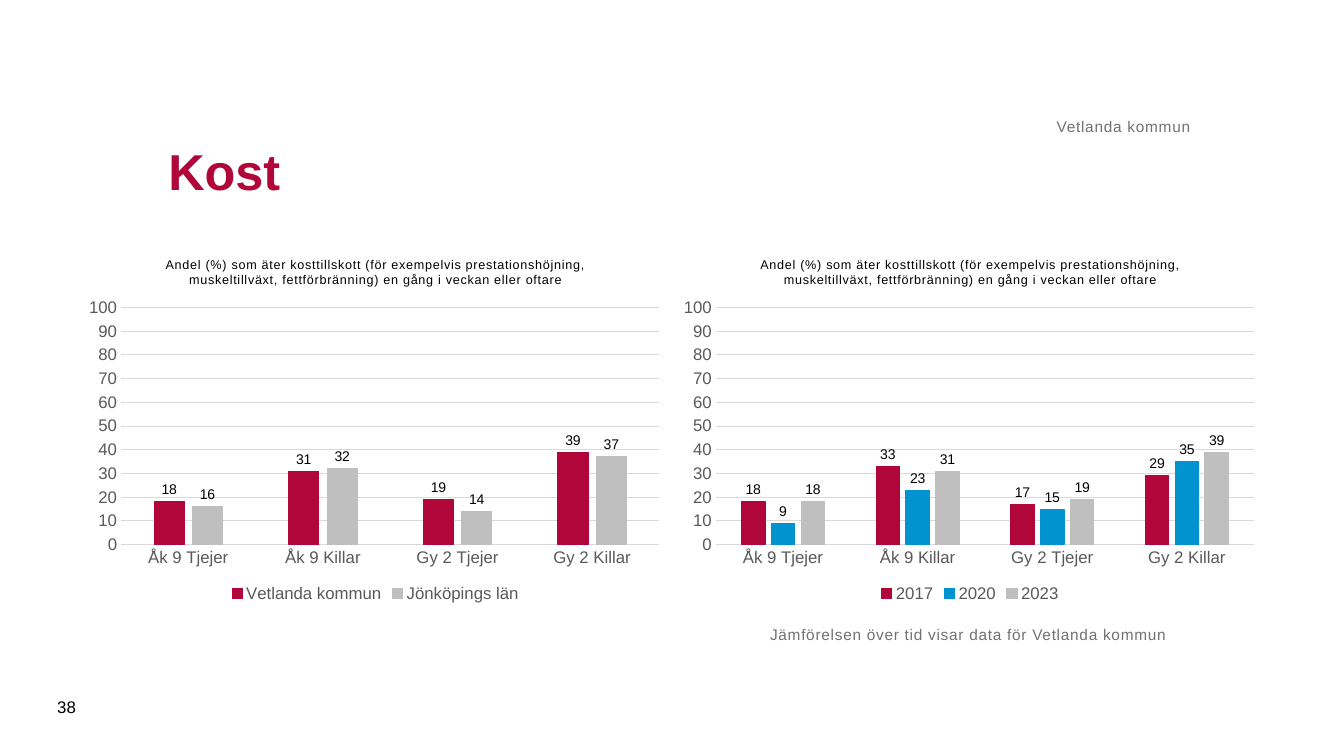
from lxml import etree
from pptx import Presentation
from pptx import util as u
from pptx.chart import data as chart_data
from pptx.dml.color import RGBColor
from pptx.enum import chart as charts, text
from pptx.oxml import ns

CRIMSON = RGBColor(0xB1, 0x06, 0x3A)
BLUE = RGBColor(0x00, 0x93, 0xD0)
SILVER = RGBColor(0xBF, 0xBF, 0xBF)
GRID = RGBColor(0xD9, 0xD9, 0xD9)
AXIS_TEXT = RGBColor(0x59, 0x59, 0x59)
NOTE_TEXT = RGBColor(0x71, 0x71, 0x71)
BLACK = RGBColor(0, 0, 0)

FONT = "Arial"
NUMBER_FORMAT = "#,##0;#,##0"
GROUPS = ["Åk 9 Tjejer", "Åk 9 Killar", "Gy 2 Tjejer", "Gy 2 Killar"]
QUESTION = ("Andel (%) som äter kosttillskott (för exempelvis prestationshöjning, "
            "muskeltillväxt, fettförbränning) en gång i veckan eller oftare")


def set_font(font, size, color, bold=False):
    font.name, font.size, font.bold = FONT, u.Pt(size), bold
    font.color.rgb = color


def write(frame, content, size=11, color=NOTE_TEXT, bold=False, spacing=0, align=None):
    """Fill a text frame with one formatted paragraph."""
    paragraph = frame.paragraphs[0]
    paragraph.alignment = align
    run = paragraph.add_run()
    run.text = content
    set_font(run.font, size, color, bold)
    if spacing:
        run._r.get_or_add_rPr().set("spc", str(round(spacing * 100)))


def place_plot(chart, x, y, w, h):
    """Fix the inner plot area, in fractions of the chart."""
    plot_area = chart._chartSpace.chart.plotArea
    for old in plot_area.findall(ns.qn("c:layout")):
        plot_area.remove(old)
    layout = etree.Element(ns.qn("c:layout"))
    manual = etree.SubElement(layout, ns.qn("c:manualLayout"))
    settings = {"layoutTarget": "inner", "xMode": "edge", "yMode": "edge",
                "x": x, "y": y, "w": w, "h": h}
    for tag, value in settings.items():
        etree.SubElement(manual, ns.qn("c:" + tag)).set("val", str(value))
    plot_area.insert(0, layout)


class SlideBuilder:
    def __init__(self, presentation):
        self.slide = presentation.slides.add_slide(presentation.slide_layouts[5])

    def title(self, content, left, top, width, height):
        shape = self.slide.shapes.title
        shape.left, shape.top = u.Pt(left), u.Pt(top)
        shape.width, shape.height = u.Pt(width), u.Pt(height)
        shape.text_frame.vertical_anchor = text.MSO_ANCHOR.MIDDLE
        write(shape.text_frame, content, size=36, color=CRIMSON, bold=True,
              align=text.PP_ALIGN.LEFT)

    def label(self, content, left, top, width, height,
              anchor=text.MSO_ANCHOR.TOP, inset=0, **style):
        shape = self.slide.shapes.add_textbox(
            u.Pt(left), u.Pt(top), u.Pt(width), u.Pt(height))
        frame = shape.text_frame
        frame.word_wrap = True
        frame.vertical_anchor = anchor
        frame.margin_left = frame.margin_right = u.Pt(inset)
        frame.margin_top = frame.margin_bottom = u.Pt(inset / 2)
        write(frame, content, **style)

    def column_chart(self, left, series):
        """Add a clustered column chart; series holds (name, values, color)."""
        data = chart_data.CategoryChartData(number_format=NUMBER_FORMAT)
        data.categories = GROUPS
        for name, values, _ in series:
            data.add_series(name, values)
        chart = self.slide.shapes.add_chart(
            charts.XL_CHART_TYPE.COLUMN_CLUSTERED,
            u.Pt(left), u.Pt(172.8), u.Pt(422.64), u.Pt(260.64), data).chart
        set_font(chart.font, 10, BLACK)
        chart.has_title = True
        write(chart.chart_title.text_frame, QUESTION, size=9, color=BLACK, spacing=0.5)
        chart.chart_title.include_in_layout = False
        place_plot(chart, 0.07, 0.18, 0.91, 0.65)

        # Legend
        chart.has_legend = True
        chart.legend.position = charts.XL_LEGEND_POSITION.BOTTOM
        chart.legend.include_in_layout = False
        set_font(chart.legend.font, 12, AXIS_TEXT)

        # Axes
        for axis in (chart.category_axis, chart.value_axis):
            axis.major_tick_mark = axis.minor_tick_mark = charts.XL_TICK_MARK.NONE
            set_font(axis.tick_labels.font, 12, AXIS_TEXT)
        value_axis = chart.value_axis
        value_axis.minimum_scale, value_axis.maximum_scale = 0, 100
        value_axis.major_unit = 10
        value_axis.tick_labels.number_format = NUMBER_FORMAT
        value_axis.tick_labels.number_format_is_linked = False
        value_axis.format.line.fill.background()
        for line in (chart.category_axis.format.line,
                     value_axis.major_gridlines.format.line):
            line.color.rgb, line.width = GRID, u.Pt(0.75)

        # Columns and their values
        plot = chart.plots[0]
        plot.gap_width, plot.overlap, plot.vary_by_categories = 219, -27, False
        for columns, (_, _, color) in zip(plot.series, series):
            columns.format.fill.solid()
            columns.format.fill.fore_color.rgb = color
            columns.format.line.color.rgb = color
            columns.format.line.width = u.Pt(0.75)
            labels = columns.data_labels
            labels.show_value = True
            labels.position = charts.XL_LABEL_POSITION.OUTSIDE_END
            labels.number_format = NUMBER_FORMAT
            labels.number_format_is_linked = False
            set_font(labels.font, 10, BLACK)


def main():
    presentation = Presentation()
    presentation.slide_width, presentation.slide_height = u.Pt(960), u.Pt(540)
    builder = SlideBuilder(presentation)

    # Heading
    builder.title("Kost", 113, 70.5, 737.3, 102.3)
    builder.label("Vetlanda kommun", 113, 44.6, 737.3, 52.6, spacing=0.5,
                  anchor=text.MSO_ANCHOR.BOTTOM, align=text.PP_ALIGN.RIGHT)

    # Comparison with the county, and over time
    builder.column_chart(56.9, [
        ("Vetlanda kommun", (18, 31, 19, 39), CRIMSON),
        ("Jönköpings län", (16, 32, 14, 37), SILVER)])
    builder.column_chart(481.7, [
        ("2017", (18, 33, 17, 29), CRIMSON),
        ("2020", (9, 23, 15, 35), BLUE),
        ("2023", (18, 31, 19, 39), SILVER)])

    # Note and page number
    builder.label("Jämförelsen över tid visar data för Vetlanda kommun",
                  550, 446.4, 382.3, 67.7, spacing=0.5)
    builder.label("38", 33.8, 490.3, 41, 28.8, inset=7.2, size=12, color=BLACK,
                  anchor=text.MSO_ANCHOR.MIDDLE)

    presentation.save("out.pptx")


if __name__ == "__main__":
    main()
